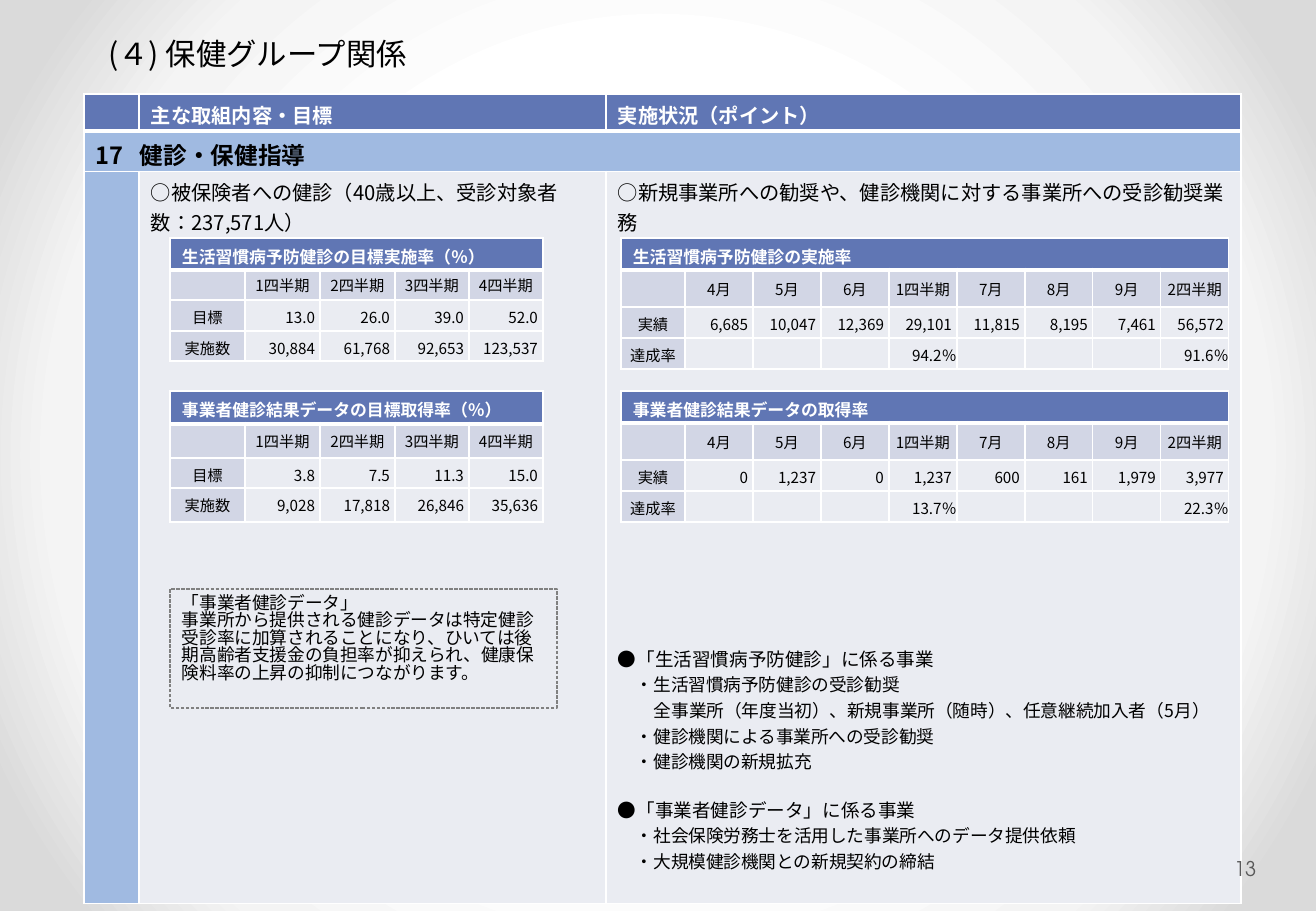
from lxml.etree import SubElement
from pptx import Presentation
from pptx.dml.color import RGBColor
from pptx.enum.dml import MSO_LINE
from pptx.enum.lang import MSO_LANGUAGE_ID
from pptx.enum.shapes import MSO_SHAPE
from pptx.enum.text import MSO_ANCHOR, MSO_AUTO_SIZE, PP_ALIGN
from pptx.oxml import parse_xml
from pptx.oxml.ns import nsdecls, qn
from pptx.util import Pt

PX = 7526  # EMU in one px

THEME = {
    "font": "Noto Sans CJK JP", "number_font": "TeX Gyre Adventor",
    "black": "000000", "white": "FFFFFF", "header": "6076B4", "section": "A0BAE1",
    "label": "D2D6E5", "body": "EAECF2", "outline": "808080", "number": "595959",
    "backdrop": [(50, "FFFFFF"), (76, "F4F4F4"), (92, "DADADA")],
    "title_size": 18, "section_size": 14, "text_size": 12, "topic_size": 11,
    "detail_size": 10.5, "caption_size": 10, "data_size": 9,
}


def write(paragraph, text, size, color="black", bold=False, font="font"):
    run = paragraph.add_run()
    run.text = text
    run.font.size = Pt(THEME[size])
    run.font.bold = bold
    run.font.name = THEME[font]
    run.font.color.rgb = RGBColor.from_string(THEME[color])
    run.font.language_id = MSO_LANGUAGE_ID.JAPANESE
    properties = run.font._element
    properties.find(qn("a:latin")).addnext(
        parse_xml(f'<a:ea {nsdecls("a")} typeface="{THEME[font]}"/>'))


def make_table(left, top, columns, heights, fills):
    """Make a white-ruled table; fills gives (first column, other columns) by row."""
    table = slide.shapes.add_table(len(heights), len(columns), left * PX, top * PX,
                                   sum(columns) * PX, sum(heights) * PX).table
    table.first_row = table.horz_banding = False
    for column, width in zip(table.columns, columns):
        column.width = width * PX
    for r, height in enumerate(heights):
        table.rows[r].height = height * PX
        for c in range(len(columns)):
            cell = table.cell(r, c)
            cell.margin_left = cell.margin_right = 12 * PX
            cell.margin_top, cell.margin_bottom = 6 * PX, 0
            cell.fill.solid()
            cell.fill.fore_color.rgb = RGBColor.from_string(THEME[fills[r][c > 0]])
            paragraph = cell.text_frame.paragraphs[0]._p
            SubElement(paragraph, qn("a:endParaRPr")).set("sz", str(THEME["data_size"] * 100))
            for i, side in enumerate("LRTB"):
                thick = (side == "B" and r == 0) or (side == "T" and r == 1)
                cell._tc.get_or_add_tcPr().insert(i, parse_xml(
                    f'<a:ln{side} {nsdecls("a")} w="{Pt(3 if thick else 1)}"><a:solidFill>'
                    f'<a:srgbClr val="{THEME["white"]}"/></a:solidFill></a:ln{side}>'))
    return table


presentation = Presentation()
presentation.slide_width, presentation.slide_height = 1316 * PX, 911 * PX
slide = presentation.slides.add_slide(presentation.slide_layouts[5])

# Background: round gradient
slide.background.fill.solid()
stops = "".join(f'<a:gs pos="{position * 1000}"><a:srgbClr val="{color}"/></a:gs>'
                for position, color in THEME["backdrop"])
solid = slide.element.find(".//" + qn("a:solidFill"))
solid.getparent().replace(solid, parse_xml(
    f'<a:gradFill {nsdecls("a")} rotWithShape="1"><a:gsLst>{stops}</a:gsLst><a:path path="circle">'
    '<a:fillToRect l="50000" t="50000" r="50000" b="50000"/></a:path></a:gradFill>'))

# Title
title = slide.shapes.title
title.left, title.top, title.width, title.height = 96 * PX, 35 * PX, 525 * PX, 49 * PX
frame = title.text_frame
frame.auto_size = MSO_AUTO_SIZE.NONE
frame.vertical_anchor = MSO_ANCHOR.TOP
frame.margin_left, frame.margin_top = 12 * PX, 0
frame.paragraphs[0].alignment = PP_ALIGN.LEFT
write(frame.paragraphs[0], "(４) 保健グループ関係", "title_size")

# Main table
main = make_table(84, 94, [55, 467, 635], [37, 40, 732],
                  [("header", "header"), ("section", "section"), ("section", "body")])
for c, heading in enumerate(["主な取組内容・目標", "実施状況（ポイント）"], 1):
    write(main.cell(0, c).text_frame.paragraphs[0], heading, "text_size", "white", True)
main.cell(1, 0).merge(main.cell(1, 2))
section = main.cell(1, 0).text_frame.paragraphs[0]
section._p.get_or_add_pPr().set("marL", str(44 * PX))
section._p.get_or_add_pPr().set("indent", str(-44 * PX))
write(section, "17\t健診・保健指導", "section_size", bold=True)
write(main.cell(2, 1).text_frame.paragraphs[0],
      "○被保険者への健診（40歳以上、受診対象者数：237,571人）", "text_size")

# Activities: text, size, indent in px, space before in points
activities = [
    ("○新規事業所への勧奨や、健診機関に対する事業所への受診勧奨業務", "text_size", 0, 0),
    ("●「生活習慣病予防健診」に係る事業", "topic_size", 0, 242),
    ("・生活習慣病予防健診の受診勧奨", "detail_size", 18, 0),
    ("全事業所（年度当初）、新規事業所（随時）、任意継続加入者（5月）", "detail_size", 36, 0),
    ("・健診機関による事業所への受診勧奨", "detail_size", 18, 0),
    ("・健診機関の新規拡充", "detail_size", 18, 0),
    ("●「事業者健診データ」に係る事業", "topic_size", 0, 13),
    ("・社会保険労務士を活用した事業所へのデータ提供依頼", "detail_size", 18, 0),
    ("・大規模健診機関との新規契約の締結", "detail_size", 18, 0),
]
frame = main.cell(2, 2).text_frame
for i, (text, size, indent, gap) in enumerate(activities):
    paragraph = frame.add_paragraph() if i else frame.paragraphs[0]
    paragraph.space_before = Pt(gap)
    paragraph._p.get_or_add_pPr().set("marL", str(indent * PX))
    write(paragraph, text, size)

# Note on employer checkup data
note = slide.shapes.add_shape(MSO_SHAPE.RECTANGLE, 170 * PX, 589 * PX, 387 * PX, 119 * PX)
note.shadow.inherit = False
note.fill.background()
note.line.color.rgb = RGBColor.from_string(THEME["outline"])
note.line.width = Pt(0.75)
note.line.dash_style = MSO_LINE.SQUARE_DOT
frame = note.text_frame
frame.word_wrap = True
frame.vertical_anchor = MSO_ANCHOR.TOP
frame.margin_left, frame.margin_right = 12 * PX, 10 * PX
frame.margin_top = frame.margin_bottom = 6 * PX
for i, text in enumerate([
        "「事業者健診データ」",
        "事業所から提供される健診データは特定健診受診率に加算されることになり、ひいては後期高齢者"
        "支援金の負担率が抑えられ、健康保険料率の上昇の抑制につながります。"]):
    paragraph = frame.add_paragraph() if i else frame.paragraphs[0]
    paragraph.alignment = PP_ALIGN.LEFT
    paragraph.line_spacing = 0.83
    write(paragraph, text, "detail_size")

# Slide number
number = slide.shapes.add_textbox(1230 * PX, 844 * PX, 81 * PX, 49 * PX)
number.text_frame.word_wrap = True
number.text_frame.vertical_anchor = MSO_ANCHOR.MIDDLE
number.text_frame.margin_left = 4 * PX
write(number.text_frame.paragraphs[0], "13", "text_size", "number", font="number_font")

# Checkup tables: targets on the left, results on the right
quarters = ["", "1四半期", "2四半期", "3四半期", "4四半期"]
months = ["", "4月", "5月", "6月", "1四半期", "7月", "8月", "9月", "2四半期"]
target_columns = [75] * 3 + [74] * 2
result_columns = [64] + [68] * 8
checkup_tables = [
    (621, 238, result_columns, [32, 37, 31, 31], "生活習慣病予防健診の実施率", [
        months,
        ["実績", "6,685", "10,047", "12,369", "29,101", "11,815", "8,195", "7,461", "56,572"],
        ["達成率", "", "", "", "94.2％", "", "", "", "91.6％"]]),
    (170, 238, target_columns, [32, 30, 31, 30], "生活習慣病予防健診の目標実施率（％）", [
        quarters,
        ["目標", "13.0", "26.0", "39.0", "52.0"],
        ["実施数", "30,884", "61,768", "92,653", "123,537"]]),
    (621, 391, result_columns, [32, 37, 31, 31], "事業者健診結果データの取得率", [
        months,
        ["実績", "0", "1,237", "0", "1,237", "600", "161", "1,979", "3,977"],
        ["達成率", "", "", "", "13.7％", "", "", "", "22.3％"]]),
    (170, 391, target_columns, [33, 34, 30, 34], "事業者健診結果データの目標取得率（％）", [
        quarters,
        ["目標", "3.8", "7.5", "11.3", "15.0"],
        ["実施数", "9,028", "17,818", "26,846", "35,636"]]),
]
for left, top, columns, heights, caption, rows in checkup_tables:
    table = make_table(left, top, columns, heights,
                       [("header", "header"), ("label", "label")] + [("label", "body")] * 2)
    table.cell(0, 0).merge(table.cell(0, len(columns) - 1))
    write(table.cell(0, 0).text_frame.paragraphs[0], caption, "caption_size", "white", True)
    for r, row in enumerate(rows, 1):
        for c, text in enumerate(row):
            cell = table.cell(r, c)
            is_value = r > 1 and c > 0
            cell.margin_left = 0
            cell.margin_right = 5 * PX if is_value and "％" not in text else 0
            if r == 1:
                cell.margin_top = 0
                cell.vertical_anchor = MSO_ANCHOR.MIDDLE
            paragraph = cell.text_frame.paragraphs[0]
            paragraph.alignment = PP_ALIGN.RIGHT if is_value else PP_ALIGN.CENTER
            if text:
                write(paragraph, text, "data_size")

presentation.save("out.pptx")
